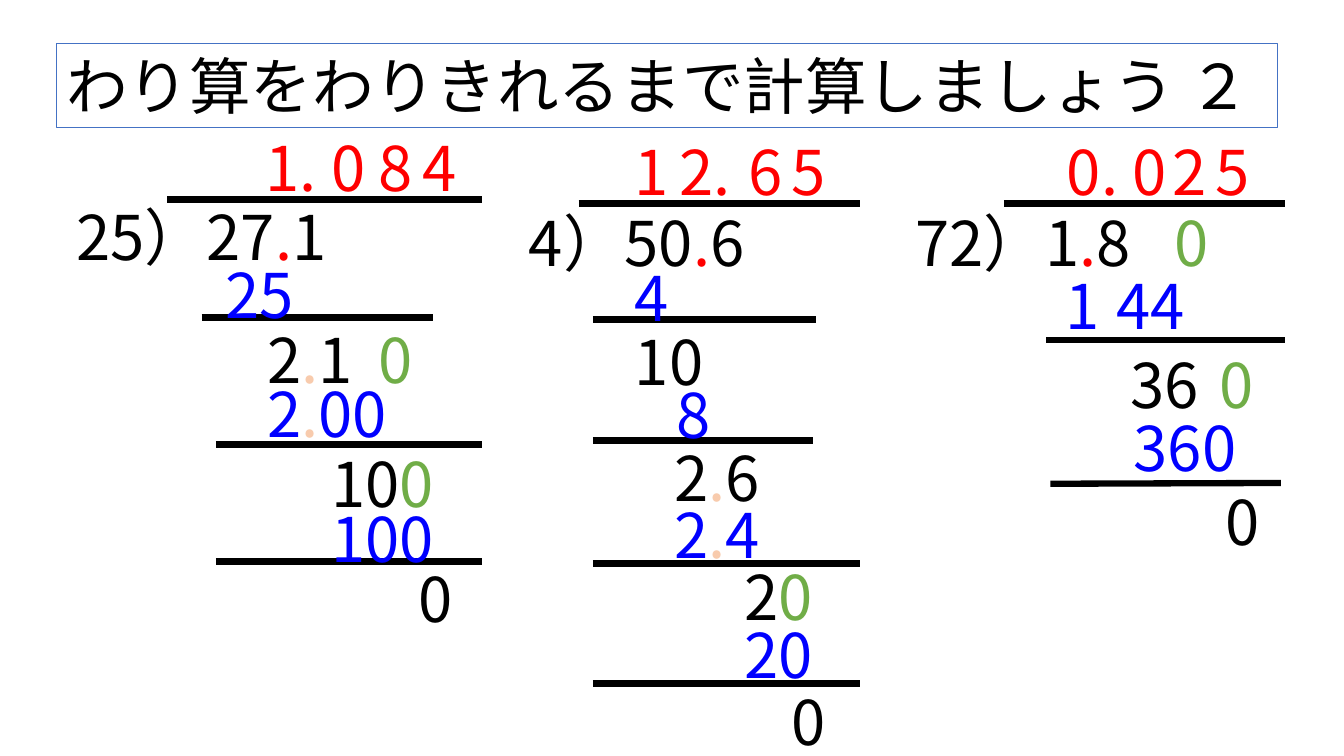
from lxml import etree
from pptx import Presentation
from pptx.dml.color import RGBColor
from pptx.enum.shapes import MSO_CONNECTOR, MSO_SHAPE
from pptx.enum.text import MSO_ANCHOR, MSO_AUTO_SIZE, PP_ALIGN
from pptx.oxml.ns import qn
from pptx.util import Cm, Pt

STRAIGHT = MSO_CONNECTOR.STRAIGHT
RECT = MSO_SHAPE.RECTANGLE
GROW = MSO_AUTO_SIZE.SHAPE_TO_FIT_TEXT
TOP = MSO_ANCHOR.TOP
LEFT = PP_ALIGN.LEFT

BLACK = RGBColor(0x00, 0x00, 0x00)
RED = RGBColor(0xFF, 0x00, 0x00)
BLUE = RGBColor(0x00, 0x00, 0xFF)
GREEN = RGBColor(0x70, 0xAD, 0x47)
PEACH = RGBColor(0xF8, 0xCB, 0xAD)
WHITE = RGBColor(0xFF, 0xFF, 0xFF)
BORDER = RGBColor(0x44, 0x72, 0xC4)

DIGIT_W = 1.63
POINT_W = 2.21

QUOTIENTS = [
    (3.16, [(6.43, "1."), (8.1, "0"), (9.3, "8"), (10.39, "4")]),
    (3.25, [(15.75, "1"), (16.87, "2."), (18.62, "6"), (19.69, "5")]),
    (3.25, [(26.64, "0."), (28.3, "0"), (29.31, "2"), (30.38, "5")]),
]

# x, y, width, text, colour, marked character, its colour
STEPS = [
    (1.68, 4.88, 8.2, "25）27.1", BLACK, 5, RED),
    (5.44, 6.35, 2.72, "25", BLUE),
    (6.48, 7.98, 3.3, "2.1", BLACK, 1, PEACH),
    (9.3, 7.98, 1.93, "0", GREEN),
    (6.48, 9.35, 4.57, "2.00", BLUE, 1, PEACH),
    (8.1, 11.1, 4.04, "100", BLACK, 2, GREEN),
    (8.1, 12.5, 4.04, "100", BLUE),
    (10.31, 14.02, DIGIT_W, "0", BLACK),
    (13.08, 5.05, 7.09, "4）50.6", BLACK, 4, RED),
    (15.75, 6.43, DIGIT_W, "4", BLUE),
    (15.75, 8.05, 5, "10", BLACK),
    (16.79, 9.37, 1.57, "8", BLUE),
    (16.74, 10.97, 3.45, "2.6", BLACK, 1, PEACH),
    (16.74, 12.4, 3.45, "2.4", BLUE, 1, PEACH),
    (18.52, 13.97, 3.18, "20", BLACK, 1, GREEN),
    (18.52, 15.42, 3.18, "20", BLUE),
    (19.69, 17.12, DIGIT_W, "0", BLACK),
    (22.81, 5.05, 7.09, "72）1.8", BLACK, 4, RED),
    (29.34, 5.05, 1.73, "0", GREEN),
    (26.59, 6.63, 4.42, "1.44", BLUE, 1, WHITE),
    (28.24, 8.61, 2.92, "36", BLACK),
    (30.48, 8.61, 1.73, "0", GREEN),
    (28.32, 10.21, 3.91, "360", BLUE),
    (30.63, 12.07, DIGIT_W, "0", BLACK),
]

RULES = [
    (4.22, 12.14, 5.03), (5.08, 10.92, 8), (5.44, 12.14, 11.2), (5.44, 12.14, 14.15),
    (14.58, 21.67, 5.13), (14.94, 20.57, 8.05), (14.94, 20.5, 11.1),
    (14.94, 21.67, 14.2), (14.94, 21.67, 17.22),
    (25.3, 32.39, 5.13), (26.37, 32.39, 8.56), (26.47, 32.28, 12.19, 12.17),
]


def write(tf, text, size=44, font="Noto Sans CJK JP", color=BLACK, mark=None, mark_color=RED):
    tf.word_wrap = True
    tf.auto_size = GROW
    tf.vertical_anchor = TOP
    p = tf.paragraphs[0]
    p.alignment = LEFT
    parts = [(text, color)]
    if mark is not None:
        parts = [(text[:mark], color), (text[mark], mark_color), (text[mark + 1:], color)]
    for part, tint in parts:
        if part:
            r = p.add_run()
            r.text = part
            r.font.size = Pt(size)
            r.font.name = font
            r.font.color.rgb = tint
            etree.SubElement(r.font._element, qn("a:ea")).set("typeface", font)


class Worksheet:
    """Draws long division on one slide."""

    height = 2.13
    rule_width = 4.5

    def __init__(self, slide):
        self.s = slide

    def title(self, x, y, w, text):
        sp = self.s.shapes.add_shape(RECT, Cm(x), Cm(y), Cm(w), Cm(self.height))
        sp.shadow.inherit = False
        sp.fill.background()
        sp.line.color.rgb = BORDER
        sp.line.width = Pt(0.75)
        write(sp.text_frame, text)

    def number(self, x, y, w, text, color, mark=None, mark_color=RED):
        sp = self.s.shapes.add_textbox(Cm(x), Cm(y), Cm(w), Cm(self.height))
        write(sp.text_frame, text, color=color, mark=mark, mark_color=mark_color)

    def rule(self, x1, x2, y1, y2=None):
        end = y1 if y2 is None else y2
        line = self.s.shapes.add_connector(STRAIGHT, Cm(x1), Cm(y1), Cm(x2), Cm(end))
        line.line.color.rgb = BLACK
        line.line.width = Pt(self.rule_width)
        etree.SubElement(line._element.spPr, qn("a:effectLst"))


def main():
    prs = Presentation()
    prs.slide_width = Cm(33.87)
    prs.slide_height = Cm(19.05)
    sheet = Worksheet(prs.slides.add_slide(prs.slide_layouts[6]))
    for rule in RULES:
        sheet.rule(*rule)
    sheet.title(1.42, 1.09, 30.78, "わり算をわりきれるまで計算しましょう ２")
    for y, digits in QUOTIENTS:
        for x, text in digits:
            sheet.number(x, y, POINT_W if "." in text else DIGIT_W, text, RED)
    for step in STEPS:
        sheet.number(*step)
    prs.save("out.pptx")


if __name__ == "__main__":
    main()
